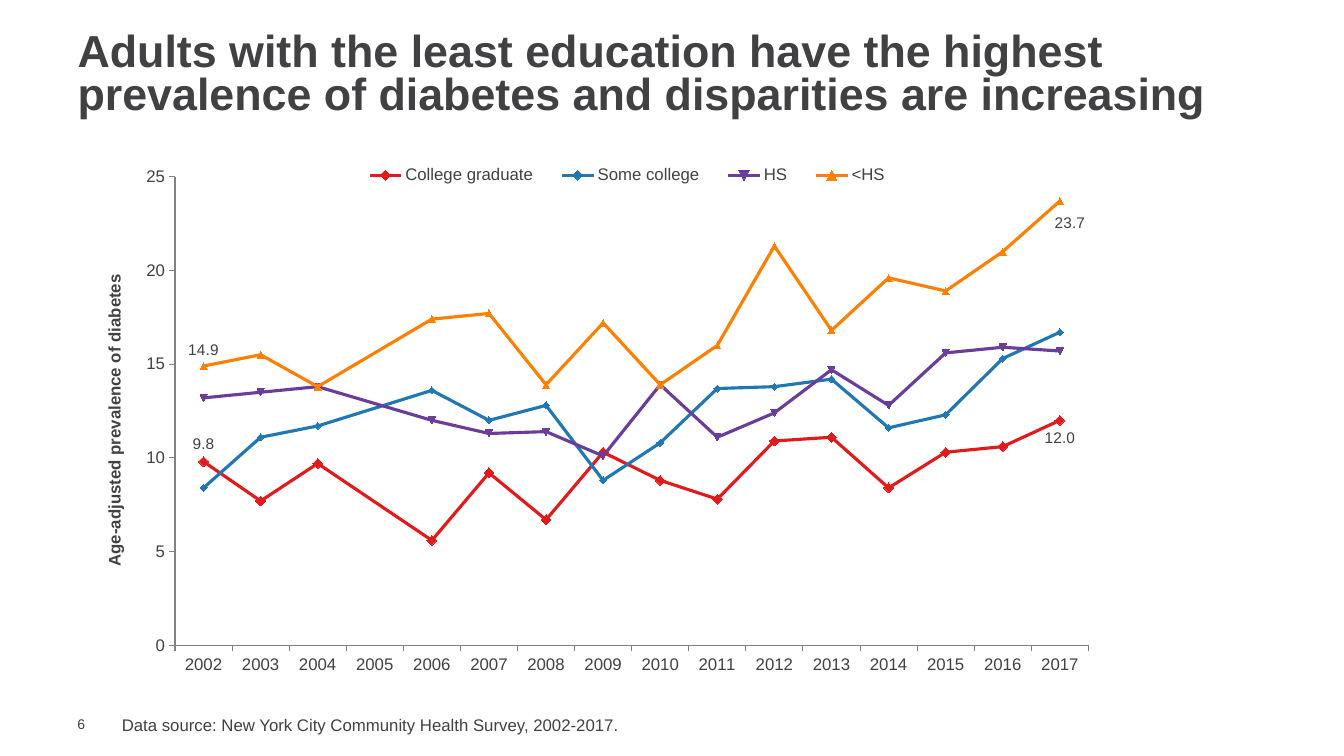
from pptx import Presentation
from pptx import util as u
from pptx.chart.data import CategoryChartData
from pptx.dml.color import RGBColor
from pptx.enum import chart as ch, text as t
from pptx.oxml import parse_xml
from pptx.oxml.ns import nsdecls

GREY = "414042"


def style(font, size, bold=False):
    font.name, font.size, font.bold = "Arial", u.Pt(size), bold
    font.color.rgb = RGBColor.from_string(GREY)


def place(node, index, **spots):
    """Give a chart part a manual layout, as fractions of the chart."""
    for old in node.xpath("./c:layout"):
        node.remove(old)
    tags = "".join(f'<c:{key} val="{val}"/>' for key, val in spots.items())
    node.insert(index, parse_xml(
        f'<c:layout {nsdecls("c")}><c:manualLayout>{tags}</c:manualLayout></c:layout>'))


prs = Presentation()
prs.slide_width, prs.slide_height = u.Cm(33.87), u.Cm(19.05)
slide = prs.slides.add_slide(prs.slide_layouts[5])

# Title
title = slide.shapes.title
title.left, title.top, title.width, title.height = u.Cm(1.7), u.Cm(0.71), u.Cm(30.2), u.Cm(2.44)
frame = title.text_frame
frame.text = ("Adults with the least education have the highest "
              "prevalence of diabetes and disparities are increasing")
frame.auto_size = t.MSO_AUTO_SIZE.NONE
frame.vertical_anchor = t.MSO_ANCHOR.MIDDLE
head = frame.paragraphs[0]
head.alignment, head.line_spacing = t.PP_ALIGN.LEFT, 0.8
style(head.font, 32, True)

# Chart
data = CategoryChartData(number_format="0.0")
data.categories = [str(year) for year in range(2002, 2018)]
groups = [
    ("College graduate", "E31A1C", [9.8, 7.7, 9.7, None, 5.6, 9.2, 6.7, 10.3,
                                    8.8, 7.8, 10.9, 11.1, 8.4, 10.3, 10.6, 12]),
    ("Some college", "1F78B4", [8.4, 11.1, 11.7, None, 13.6, 12, 12.8, 8.8,
                                10.8, 13.7, 13.8, 14.2, 11.6, 12.3, 15.3, 16.7]),
    ("HS", "6A3D9A", [13.2, 13.5, 13.8, None, 12, 11.3, 11.4, 10.1,
                      13.9, 11.1, 12.4, 14.7, 12.8, 15.6, 15.9, 15.7]),
    ("<HS", "FF7F00", [14.9, 15.5, 13.8, None, 17.4, 17.7, 13.9, 17.2,
                       13.9, 16, 21.3, 16.8, 19.6, 18.9, 21, 23.7]),
]
for name, color, vals in groups:
    data.add_series(name, vals)
chart = slide.shapes.add_chart(ch.XL_CHART_TYPE.LINE_MARKERS, u.Cm(2.54), u.Cm(4.09),
                               u.Cm(25.27), u.Cm(12.9), data).chart
style(chart.font, 10)
chart.has_title = False
chart.plots[0].vary_by_categories = False

for line, (name, color, vals) in zip(chart.plots[0].series, groups):
    shade = RGBColor.from_string(color)
    line.smooth = False
    line.format.line.width = u.Pt(2.25)
    line.marker.size = 5
    line.marker.format.fill.solid()
    line.marker.format.fill.fore_color.rgb = shade
    for edge in (line.format.line, line.marker.format.line):
        edge.color.rgb = shade
    if name in ("College graduate", "<HS"):
        line.data_labels.show_value = False
        for spot, side in ((0, ch.XL_LABEL_POSITION.ABOVE), (15, ch.XL_LABEL_POSITION.BELOW)):
            label = line.points[spot].data_label
            style(label.font, 11)
            label.position = side
first = chart.plots[0].series[0].marker
first.style, first.size = ch.XL_MARKER_STYLE.DIAMOND, 7

# Axes
years, rate = chart.category_axis, chart.value_axis
for axis in (years, rate):
    axis.has_major_gridlines = False
    axis.major_tick_mark = ch.XL_TICK_MARK.OUTSIDE
    axis.minor_tick_mark = ch.XL_TICK_MARK.NONE
    axis.format.line.color.rgb = RGBColor.from_string("808080")
    axis.format.line.width = u.Pt(0.75)
    style(axis.tick_labels.font, 12)
rate.minimum_scale, rate.maximum_scale, rate.major_unit = 0, 25, 5
rate.tick_labels.number_format = "#,##0"
rate.tick_labels.number_format_is_linked = False
name = rate.axis_title.text_frame
name.text = "Age-adjusted prevalence of diabetes"
style(name.paragraphs[0].font, 12, True)

# Legend and layout
chart.has_legend = True
chart.legend.position = ch.XL_LEGEND_POSITION.TOP
chart.legend.include_in_layout = False
style(chart.legend.font, 12)
root = chart.element
place(root.xpath("//c:plotArea")[0], 0, layoutTarget="inner", xMode="edge", yMode="edge",
      x=0.074, y=0.028, w=0.911, h=0.916)
place(root.xpath("//c:legend")[0], 1, xMode="edge", yMode="edge", x=0.245, y=0, w=0.56, h=0.05)
place(root.xpath('//c:ser[4]//c:dLbl[c:idx/@val="15"]')[0], 1, x=0.01, y=0.01)
root.xpath("//c:dispBlanksAs")[0].set("val", "span")

# Footer
for words, size, left, top, width, height, pad in (
        ("6", 10, 1.7, 18.03, 1.09, 0.43, 0),
        ("Data source: New York City Community Health Survey, 2002-2017.",
         12, 2.82, 17.88, 24.66, 0.76, 0.13)):
    frame = slide.shapes.add_textbox(u.Cm(left), u.Cm(top), u.Cm(width), u.Cm(height)).text_frame
    frame.word_wrap = True
    frame.margin_top = frame.margin_bottom = u.Cm(pad)
    frame.vertical_anchor = t.MSO_ANCHOR.MIDDLE
    frame.text = words
    style(frame.paragraphs[0].font, size)

prs.save("out.pptx")
